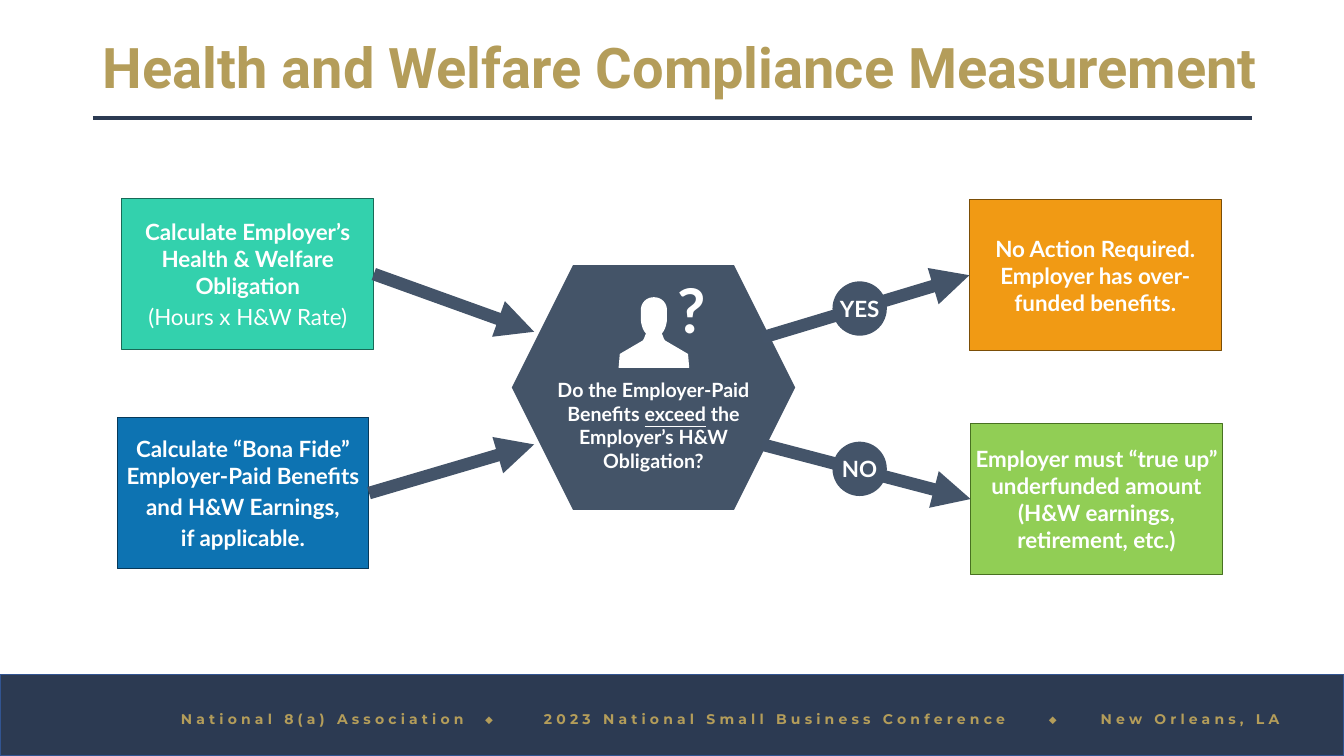
from lxml.etree import SubElement
from pptx import Presentation
from pptx.dml.color import RGBColor
from pptx.enum.shapes import MSO_CONNECTOR as Link, MSO_SHAPE as Shape
from pptx.enum.text import MSO_ANCHOR as Anchor, MSO_AUTO_SIZE as Fit, PP_ALIGN as Align
from pptx.oxml.ns import qn
from pptx.util import Cm, Pt

COLORS = {
    "gold": "B49D5A", "navy": "2C3A52", "navy edge": "325491",
    "slate": "445469", "hexagon": "445468", "white": "FFFFFF",
    "teal": "33D1AD", "teal edge": "186A57",
    "blue": "0D73B2", "blue edge": "073959",
    "orange": "F19A14", "orange edge": "7B4E07",
    "green": "91CE55", "green edge": "487121",
}
BOX_WIDTH, BOX_HEIGHT = 6.35, 3.81


def color(name):
    return RGBColor.from_string(COLORS[name])


def write(paragraph, text, size=16, font="Lato", ink="white", bold=True,
          underline=False, tracking=None):
    run = paragraph.add_run()
    run.text = text
    run.font.size = Pt(size)
    run.font.name = font
    run.font.bold = bold
    run.font.color.rgb = color(ink)
    if underline:
        run.font.underline = True
    if tracking:
        run.font._element.set("spc", str(tracking * 100))


def bezier(p0, p1, p2, p3, steps=10):
    curve = []
    for step in range(1, steps + 1):
        t = step / steps
        weights = ((1 - t) ** 3, 3 * t * (1 - t) ** 2, 3 * t * t * (1 - t), t ** 3)
        curve.append(tuple(sum(w * p[axis] for w, p in zip(weights, (p0, p1, p2, p3)))
                           for axis in (0, 1)))
    return curve


class FlowSlide:
    def __init__(self, deck):
        self.slide = deck.slides.add_slide(deck.slide_layouts[5])
        self.shapes = self.slide.shapes

    def title(self, text, left, top, width, height):
        title = self.shapes.title
        title.left, title.top, title.width, title.height = map(Cm, (left, top, width, height))
        frame = title.text_frame
        frame.auto_size = Fit.NONE
        frame.vertical_anchor = Anchor.MIDDLE
        heading = frame.paragraphs[0]
        heading.alignment = Align.LEFT
        heading.line_spacing = 0.9
        write(heading, text, size=40, font="Roboto", ink="gold")

    def paint(self, shape, fill, edge=None, weight=0.75):
        shape.shadow.inherit = False
        shape.fill.solid()
        shape.fill.fore_color.rgb = color(fill)
        if edge:
            shape.line.color.rgb = color(edge)
            shape.line.width = Pt(weight)
        else:
            shape.line.fill.background()
        return shape

    def block(self, kind, left, top, width, height, fill, edge=None, weight=0.75):
        shape = self.shapes.add_shape(kind, *map(Cm, (left, top, width, height)))
        return self.paint(shape, fill, edge, weight)

    def fill_frame(self, frame, lines, anchor=Anchor.MIDDLE, wrap=True, align=Align.CENTER):
        frame.word_wrap = wrap
        frame.vertical_anchor = anchor
        frame.margin_left = frame.margin_right = frame.margin_top = frame.margin_bottom = 0
        for index, runs in enumerate(lines):
            paragraph = frame.add_paragraph() if index else frame.paragraphs[0]
            paragraph.alignment = align
            paragraph.space_after = Pt(3)
            for text, style in runs:
                write(paragraph, text, **style)

    def box(self, left, top, hue, lines):
        box = self.block(Shape.RECTANGLE, left, top, BOX_WIDTH, BOX_HEIGHT, hue, hue + " edge")
        self.fill_frame(box.text_frame, lines)
        return box

    def badge(self, left, top, answer):
        badge = self.block(Shape.OVAL, left, top, 1.37, 1.37, "slate")
        self.fill_frame(badge.text_frame, [[(answer, {})]], wrap=False)

    def label(self, left, top, width, height, lines, **layout):
        label = self.shapes.add_textbox(*map(Cm, (left, top, width, height)))
        self.fill_frame(label.text_frame, lines, **layout)
        return label

    def line(self, start, end, ink, weight, arrow=False):
        line = self.shapes.add_connector(Link.STRAIGHT, *map(Cm, start + end))
        line.line.color.rgb = color(ink)
        line.line.width = Pt(weight)
        properties = line._element.spPr
        if arrow:
            SubElement(properties.find(qn("a:ln")), qn("a:tailEnd"), type="triangle")
        SubElement(properties, qn("a:effectLst"))
        return line

    def person(self, center, top):
        half = [(0, 0)]
        half += bezier((0, 0), (0.18, 0), (0.33, 0.13), (0.33, 0.33))
        half += bezier((0.33, 0.53), (0.33, 0.66), (0.28, 0.84), (0.2, 0.91))
        half += [(0.25, 1.04), (0.28, 1.09), (0.81, 1.4), (0.86, 1.43), (0.89, 1.78)]
        outline = half + [(-x, y) for x, y in reversed(half[1:])]
        points = [(Cm(center + x), Cm(top + y)) for x, y in outline]
        builder = self.shapes.build_freeform(*points[0])
        builder.add_line_segments(points[1:], close=True)
        self.paint(builder.convert_to_shape(), "white")

    def footer(self, parts, stops):
        runs = [(text, dict(size=10, font="Montserrat", ink="gold", bold="◆" not in text,
                            tracking=3)) for text in parts]
        footer = self.label(4.56, 17.78, 29, 0.69, [runs], align=Align.LEFT)
        properties = footer.text_frame.paragraphs[0]._p.get_or_add_pPr()
        tabs = SubElement(properties, qn("a:tabLst"))
        for stop in stops:
            SubElement(tabs, qn("a:tab"), pos=str(Cm(stop)), algn="l")


def main():
    deck = Presentation()
    deck.slide_width, deck.slide_height = Cm(33.87), Cm(19.05)
    flow = FlowSlide(deck)

    flow.line((2.34, 2.97), (31.55, 2.97), "navy", 3)
    flow.block(Shape.RECTANGLE, 0, 16.99, 33.87, 2.06, "navy", "navy edge", 1)
    flow.footer(["National 8(a) Association", "\t◆\t",
                 "2023 National Small Business Conference", "\t◆\t", "New Orleans, LA"],
                [7.66, 9.15, 21.87, 23.18])
    flow.title("Health and Welfare Compliance Measurement", 2.34, 1.02, 30.89, 1.52)

    flow.block(Shape.HEXAGON, 12.9, 6.68, 7.14, 6.17, "hexagon")
    obligation = flow.box(3.07, 5, "teal", [
        [("Calculate Employer’s Health & Welfare Obligation", {})],
        [("(Hours x H&W Rate)", {"bold": False})]])
    benefits = flow.box(2.95, 10.52, "blue", [
        [("Calculate “Bona Fide” Employer-Paid Benefits", {})],
        [("and H&W Earnings,", {})],
        [("if applicable.", {})]])
    no_action = flow.box(24.43, 5.03, "orange", [
        [("No Action Required. Employer has over-funded benefits.", {})]])
    true_up = flow.box(24.46, 10.67, "green", [
        [("Employer must “true up” underfunded amount (H&W earnings, retirement, etc.)", {})]])

    for source, entry in ((obligation, (13.46, 8.36)), (benefits, (13.46, 11.2))):
        flow.line((9.4, 8), entry, "slate", 9, arrow=True).begin_connect(source, 3)
    for result, leave in ((no_action, (19.2, 8.51)), (true_up, (19.2, 11.2))):
        flow.line(leave, (24.4, 8), "slate", 9, arrow=True).end_connect(result, 1)

    flow.badge(20.98, 7.09, "YES")
    flow.badge(20.98, 11.13, "NO")
    flow.label(13.61, 9.53, 5.72, 2.57, [[
        ("Do the Employer-Paid Benefits ", {"size": 14}),
        ("exceed", {"size": 14, "underline": True}),
        (" the Employer’s H&W Obligation?", {"size": 14})]], anchor=Anchor.TOP)
    flow.person(16.48, 7.49)
    flow.label(16.81, 6.71, 1.24, 2.13, [[("?", {"size": 44})]], wrap=False)

    deck.save("out.pptx")


if __name__ == "__main__":
    main()
